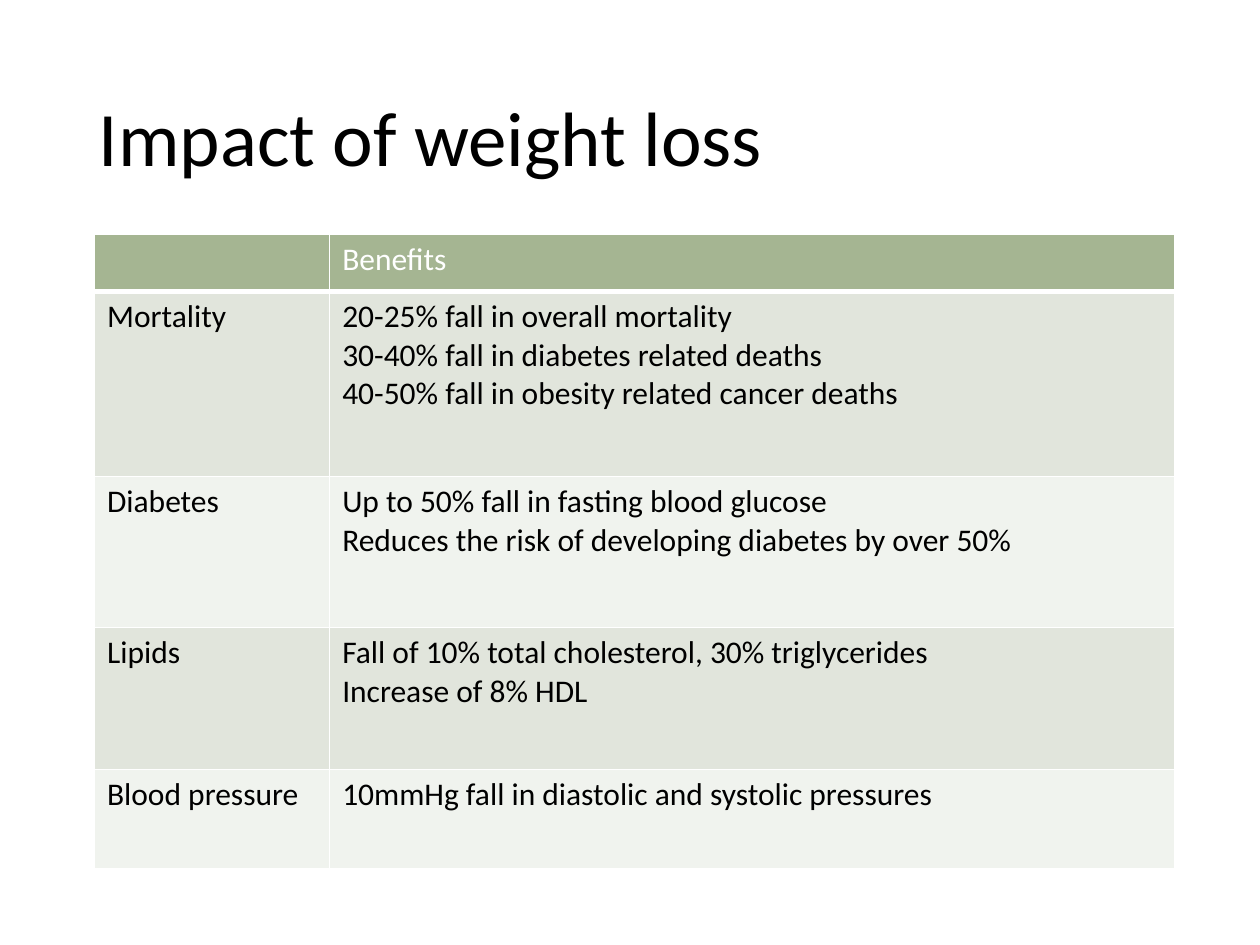
from lxml import etree
from pptx import Presentation
from pptx.dml.color import RGBColor
from pptx.enum.text import MSO_ANCHOR
from pptx.oxml.ns import qn
from pptx.util import Pt

MIDDLE = MSO_ANCHOR.MIDDLE

TITLE = "Impact of weight loss"
ROWS = [
    ("", ["Benefits"]),
    ("Mortality", ["20-25% fall in overall mortality",
                   "30-40% fall in diabetes related deaths",
                   "40-50% fall in obesity related cancer deaths"]),
    ("Diabetes", ["Up to 50% fall in fasting blood glucose",
                  "Reduces the risk of developing diabetes by over 50%"]),
    ("Lipids", ["Fall of 10% total cholesterol, 30% triglycerides",
                "Increase of 8% HDL"]),
    ("Blood pressure", ["10mmHg fall in diastolic and systolic pressures"]),
]

THEME = {
    "font": "Calibri", "title_size": 44, "cell_size": 18,
    "ink": "000000", "header_ink": "FFFFFF", "border": "FFFFFF",
    "header": "A5B592", "bands": ["E1E5DC", "F0F3EE"],
}
SLIDE_SIZE = (720, 540)
TITLE_BOX = (49.5, 28.75, 621, 104.4)
TABLE_ORIGIN = (54, 134.1)
COLUMN_WIDTHS = [134.4, 483.1]
ROW_HEIGHTS = [32.4, 105.8, 86.2, 81.2, 56.6]
BORDER_WIDTH, HEADER_RULE = 1, 3


def write(frame, lines, size, color, line_spacing=1.0):
    font_format = {"name": THEME["font"], "size": Pt(size), "bold": False}
    for index, line in enumerate(lines):
        para = frame.paragraphs[0] if index == 0 else frame.add_paragraph()
        para.line_spacing = line_spacing
        if not line:
            para.font.size = Pt(size)
            continue
        span = para.add_run()
        span.text = line
        for name, value in font_format.items():
            setattr(span.font, name, value)
        span.font.color.rgb = RGBColor.from_string(color)


def set_borders(cell, widths):
    properties = cell._tc.get_or_add_tcPr()
    for side, width in widths.items():
        line = etree.SubElement(properties, qn(f"a:ln{side}"), w=str(Pt(width)))
        fill = etree.SubElement(line, qn("a:solidFill"))
        etree.SubElement(fill, qn("a:srgbClr"), val=THEME["border"])


def add_title(page):
    box = page.shapes.add_textbox(*map(Pt, TITLE_BOX))
    frame = box.text_frame
    for name, value in {"word_wrap": True, "vertical_anchor": MIDDLE}.items():
        setattr(frame, name, value)
    write(frame, [TITLE], THEME["title_size"], THEME["ink"], 0.9)


def add_benefits_table(page):
    size = (sum(COLUMN_WIDTHS), sum(ROW_HEIGHTS))
    table = page.shapes.add_table(len(ROWS), len(COLUMN_WIDTHS),
                                  *map(Pt, TABLE_ORIGIN + size)).table
    for column, width in zip(table.columns, COLUMN_WIDTHS):
        column.width = Pt(width)
    for row_index, (label, benefits) in enumerate(ROWS):
        table.rows[row_index].height = Pt(ROW_HEIGHTS[row_index])
        is_header = row_index == 0
        fill = THEME["header"] if is_header else THEME["bands"][(row_index - 1) % 2]
        ink = THEME["header_ink"] if is_header else THEME["ink"]
        borders = dict.fromkeys("LRTB", BORDER_WIDTH)
        if is_header:
            borders["B"] = HEADER_RULE
        for column_index, lines in enumerate([[label], benefits]):
            cell = table.cell(row_index, column_index)
            set_borders(cell, borders)
            cell.fill.solid()
            cell.fill.fore_color.rgb = RGBColor.from_string(fill)
            write(cell.text_frame, lines, THEME["cell_size"], ink)


def main():
    deck = Presentation()
    deck.slide_width, deck.slide_height = map(Pt, SLIDE_SIZE)
    page = deck.slides.add_slide(deck.slide_layouts[6])
    add_title(page)
    add_benefits_table(page)
    deck.save("out.pptx")


if __name__ == "__main__":
    main()
